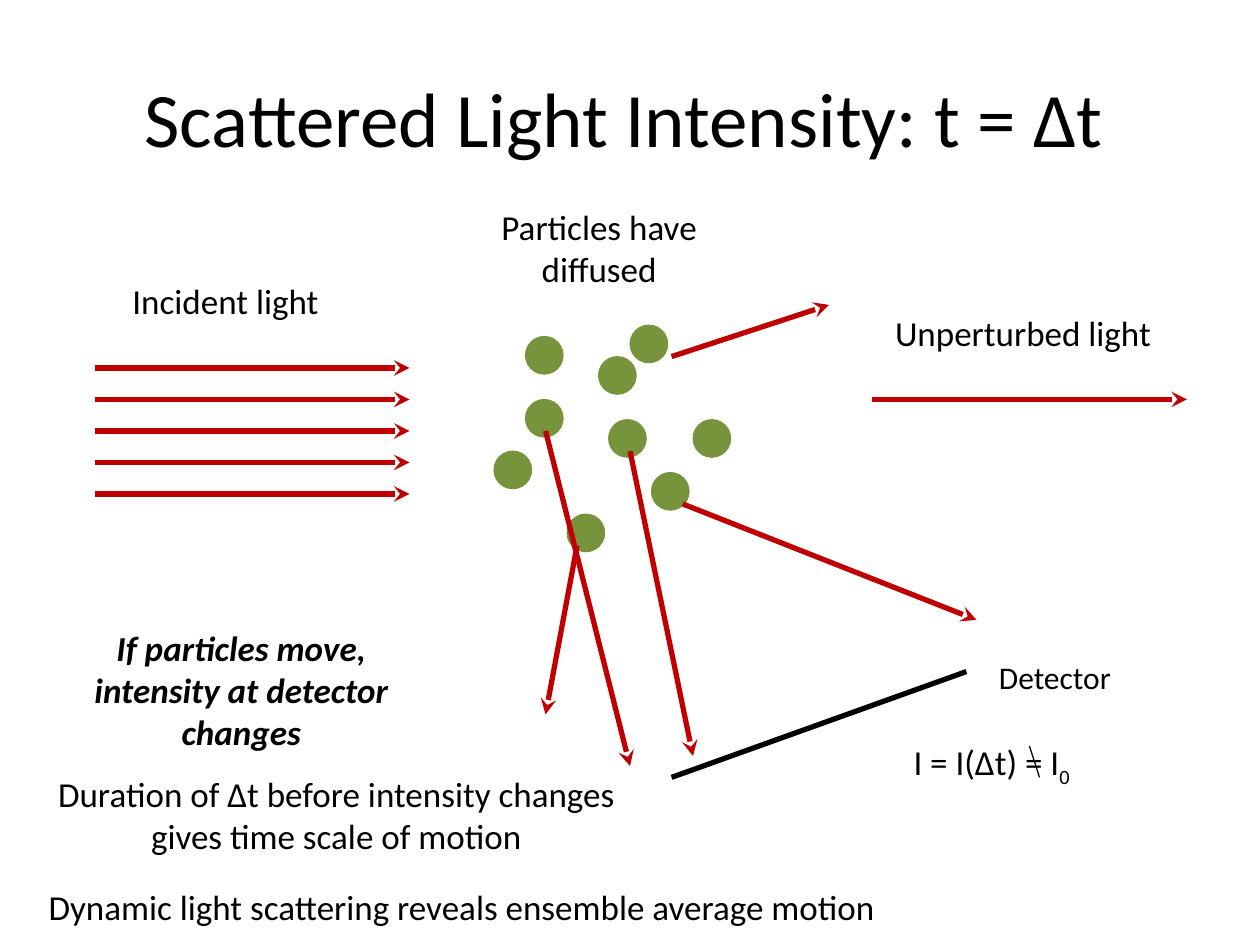
from lxml import etree
from pptx import Presentation
from pptx import util as u
from pptx.dml.color import RGBColor
from pptx.enum import shapes, text
from pptx.oxml.ns import qn

FONT = "Calibri"
RED, GREEN, BLACK = "C00000", "77933C", "000000"


def color(hex_code):
    return RGBColor.from_string(hex_code)


class SlideBuilder:
    def __init__(self, slide):
        self.slide = slide

    def style(self, para, size, align, bold=None, italic=None):
        para.alignment = align
        font = para.font
        font.name, font.size = FONT, u.Pt(size)
        font.bold, font.italic = bold, italic
        font.color.rgb = color(BLACK)

    def title(self, words, left, top, width, height):
        box = self.slide.shapes.title
        box.left, box.top = u.Inches(left), u.Inches(top)
        box.width, box.height = u.Inches(width), u.Inches(height)
        box.text_frame.text = words
        box.text_frame.vertical_anchor = text.MSO_ANCHOR.MIDDLE
        self.style(box.text_frame.paragraphs[0], 44, text.PP_ALIGN.CENTER)

    def label(self, words, left, top, width, height, size=20,
              align=text.PP_ALIGN.CENTER, wrap=True, **emphasis):
        """Add a text box and return its paragraph."""
        box = self.slide.shapes.add_textbox(
            u.Inches(left), u.Inches(top), u.Inches(width), u.Inches(height))
        frame = box.text_frame
        frame.word_wrap = wrap
        frame.auto_size = text.MSO_AUTO_SIZE.SHAPE_TO_FIT_TEXT
        para = frame.paragraphs[0]
        para.add_run().text = words
        self.style(para, size, align, **emphasis)
        return para

    def particle(self, left, top, size=0.3):
        dot = self.slide.shapes.add_shape(
            shapes.MSO_SHAPE.OVAL, u.Inches(left), u.Inches(top),
            u.Inches(size), u.Inches(size))
        dot.shadow.inherit = False
        dot.fill.solid()
        dot.fill.fore_color.rgb = color(GREEN)
        dot.line.color.rgb = color(GREEN)
        dot.line.width = u.Pt(0.5)

    def line(self, start, end, hex_code=BLACK, width=3):
        connector = self.slide.shapes.add_connector(
            shapes.MSO_CONNECTOR.STRAIGHT,
            *(u.Inches(value) for value in (*start, *end)))
        connector.line.color.rgb = color(hex_code)
        connector.line.width = u.Pt(width)
        etree.SubElement(connector._element.spPr, qn("a:effectLst"))
        return connector

    def ray(self, start, end):
        """Add a red light ray with a stealth arrowhead."""
        ray = self.line(start, end, RED)
        etree.SubElement(ray.line._get_or_add_ln(), qn("a:tailEnd"), type="stealth")


def main():
    deck = Presentation()
    deck.slide_width, deck.slide_height = u.Inches(10), u.Inches(7.5)
    page = SlideBuilder(deck.slides.add_slide(deck.slide_layouts[5]))

    page.title("Scattered Light Intensity: t = Δt", 0.08, 0.3, 9.75, 1.25)

    particles = [(4.17, 2.67), (4.17, 3.17), (4.83, 3.33), (4.75, 2.83), (3.92, 3.58),
                 (5.17, 3.75), (5, 2.58), (5.5, 3.33), (4.5, 4.08)]
    for left, top in particles:
        page.particle(left, top)

    for row in range(5):
        y = 2.92 + 0.25 * row
        page.ray((0.75, y), (3.25, y))

    page.label("Incident light", 0.5, 2.17, 2.58, 0.44)
    page.label("Particles have diffused", 3.42, 1.58, 2.67, 0.77)

    page.line((5.33, 6.17), (7.67, 5.33))  # detector
    intensity = page.label("I = I(Δt) = I", 6.08, 5.83, 3.58, 0.44)
    subscript = intensity.add_run()
    subscript.text = "0"
    subscript.font._element.set("baseline", "-25000")

    scattered_rays = [((5.42, 4), (7.75, 4.92)), ((4.58, 4.33), (4.33, 5.67)),
                      ((5, 3.58), (5.5, 6)), ((4.33, 3.42), (5, 6.08)),
                      ((5.33, 2.83), (6.58, 2.42))]
    for start, end in scattered_rays:
        page.ray(start, end)

    page.label("Dynamic light scattering reveals ensemble average motion",
               0.08, 6.98, 7.17, 0.44)
    page.label("Duration of Δt before intensity changes gives time scale of motion",
               0.17, 6.08, 5, 0.77)
    page.label("If particles move, intensity at detector changes",
               0.58, 4.92, 2.67, 1.11, bold=True, italic=True)
    page.label("Detector", 7.83, 5.17, 1.1, 0.4, size=18,
               align=text.PP_ALIGN.LEFT, wrap=False)

    page.line((8.25, 6.17), (8.17, 5.92), width=0.75)  # strikes the equals sign
    page.ray((6.92, 3.17), (9.42, 3.17))
    page.label("Unperturbed light", 6.83, 2.42, 2.58, 0.44)

    deck.save("out.pptx")


if __name__ == "__main__":
    main()
